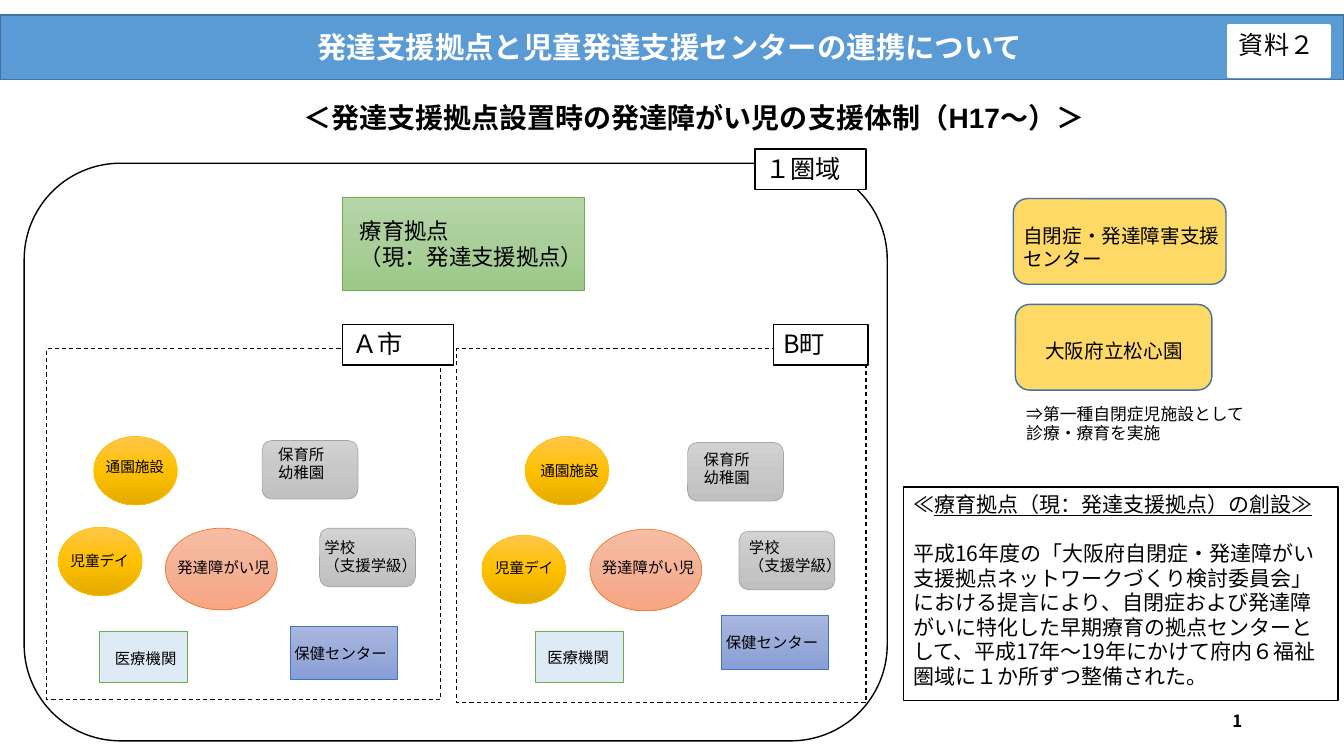
from copy import deepcopy
from dataclasses import dataclass

from lxml import etree
from pptx import Presentation
from pptx.dml.color import RGBColor
from pptx.enum.dml import MSO_LINE
from pptx.enum.shapes import MSO_SHAPE
from pptx.enum.text import MSO_ANCHOR, PP_ALIGN
from pptx.oxml.ns import qn
from pptx.util import Inches, Pt

RECT, ROUND, OVAL = MSO_SHAPE.RECTANGLE, MSO_SHAPE.ROUNDED_RECTANGLE, MSO_SHAPE.OVAL
LEFT, CENTER, RIGHT, JUSTIFY = PP_ALIGN.LEFT, PP_ALIGN.CENTER, PP_ALIGN.RIGHT, PP_ALIGN.JUSTIFY
TOP, MIDDLE = MSO_ANCHOR.TOP, MSO_ANCHOR.MIDDLE
DASH = MSO_LINE.DASH


@dataclass(frozen=True)
class Theme:
    font: str = "Noto Sans CJK JP"
    title_font: str = "Arial"
    tag_font: str = "TeX Gyre Schola"
    black: str = "000000"
    white: str = "FFFFFF"
    banner: str = "5B9BD5"
    outline: str = "43739E"
    center: str = "FFD966"
    green: tuple = ("B5D5A7", "AACE9A", "9CC987")
    green_line: str = "70AD47"
    salmon: tuple = ("F7BDA5", "F5B196", "F8A582")
    salmon_line: str = "ED7D31"
    gold: tuple = ("FFC64B", "FFC000", "E3AB00")
    gold_line: str = "FFC000"
    gray: tuple = ("D2D2D2", "C8C8C8", "C0C0C0")
    gray_line: str = "A5A5A5"
    blue: tuple = ("A8B7DF", "9AABD9", "889ED7")
    blue_line: str = "4472C4"
    pale: str = "DEEBF7"
    banner_size: float = 21
    title_size: float = 20
    tag_size: float = 18
    base_size: float = 16
    body_size: float = 15
    center_size: float = 14
    small: float = 12
    label: float = 11
    oval_label: float = 10.5
    line_height: float = 1.17


T = Theme()

# name: (shape, fill, line, size, label lines, label width, label type size)
FACILITIES = {
    "child": (OVAL, T.salmon, T.salmon_line, (1.11, 0.81), ["発達障がい児"], 1.61, T.label),
    "nursery": (OVAL, T.gold, T.gold_line, (0.83, 0.68), ["通園施設"], 1.39, T.oval_label),
    "day": (OVAL, T.gold, T.gold_line, (0.83, 0.68), ["児童デイ"], 1.39, T.oval_label),
    "school": (ROUND, T.gray, T.gray_line, (0.95, 0.58), ["学校", "（支援学級）"], 1.13, T.label),
    "preschool": (ROUND, T.gray, T.gray_line, (0.95, 0.58), ["保育所", "幼稚園"], 0.89, T.label),
    "clinic": (RECT, T.pale, T.green_line, (0.87, 0.51), ["医療機関"], 1.27, T.label),
    "health": (RECT, T.blue, T.blue_line, (1.06, 0.53), ["保健センター"], 1.31, T.label),
}

# facility: place within the town, then label offset within the facility
TOWN_A = {
    "child": (1.18, 1.78, 0.02, 0.25), "nursery": (0.47, 0.87, 0.02, 0.17),
    "day": (0.12, 1.77, 0.02, 0.2), "school": (2.71, 1.78, -0.05, 0.05),
    "preschool": (2.14, 0.91, 0.06, 0), "clinic": (0.53, 2.8, 0.05, 0.13),
    "health": (2.42, 2.75, -0.06, 0.13),
}
TOWN_B = {
    "child": (1.32, 1.79, 0.02, 0.24), "nursery": (0.68, 0.87, 0.05, 0.21),
    "day": (0.25, 1.85, 0.03, 0.19), "school": (2.8, 1.81, 0, 0.02),
    "preschool": (2.29, 0.93, 0.06, 0.03), "clinic": (0.78, 2.8, 0.02, 0.12),
    "health": (2.63, 2.65, -0.06, 0.13),
}


def rgb(value):
    return RGBColor.from_string(value)


def style(p, size, color=T.black, bold=False, align=LEFT, font=T.font):
    p.alignment = align
    p.line_spacing = Pt(round(size * T.line_height, 1))
    p.font.size, p.font.bold, p.font.name = Pt(size), bold, font
    p.font.color.rgb = rgb(color)
    east_asian = T.font if font == T.title_font else font
    etree.SubElement(p._p.pPr.find(qn("a:defRPr")), qn("a:ea"), typeface=east_asian)


def write(sp, lines, size, anchor=TOP, **look):
    tf = sp.text_frame
    tf.word_wrap, tf.vertical_anchor = True, anchor
    tf.text = "\n".join(lines)
    for p in tf.paragraphs:
        style(p, size, **look)


def add_text(slide, box, lines, size, **look):
    sp = slide.shapes.add_textbox(*map(Inches, box))
    write(sp, lines, size, **look)


def add_box(slide, kind, box, fill, line, width=1.0):
    """Draw a shape whose fill is a colour, three gradient colours or None."""
    sp = slide.shapes.add_shape(kind, *map(Inches, box))
    sp.shadow.inherit = False
    sp.line.color.rgb, sp.line.width = rgb(line), Pt(width)
    if fill is None:
        sp.fill.background()
    elif isinstance(fill, str):
        sp.fill.solid()
        sp.fill.fore_color.rgb = rgb(fill)
    else:
        sp.fill.gradient()
        sp.fill.gradient_angle = 270
        first = sp._element.spPr.find(".//" + qn("a:gs"))
        middle = deepcopy(first)
        middle.set("pos", "50000")
        first.addnext(middle)
        for stop, color in zip(sp.fill.gradient_stops, fill):
            stop.color.rgb = rgb(color)
    return sp


def add_tag(slide, box, name):
    write(add_box(slide, RECT, box, T.white, T.black), [name], T.tag_size)


def add_banner(slide, x, y, w, h):
    add_box(slide, RECT, (x, y, w, h), T.banner, T.outline)
    add_text(slide, (x + 3.05, y + 0.1, 7.23, 0.45),
             ["発達支援拠点と児童発達支援センターの連携について"],
             T.banner_size, color=T.white, bold=True)
    tag = add_box(slide, RECT, (x + 12.19, y + 0.1, 1, 0.51), T.white, T.white, 2.25)
    write(tag, ["資料２"], T.tag_size, align=JUSTIFY, font=T.tag_font)


def add_title(slide, *box):
    sp = slide.shapes.title
    sp.left, sp.top, sp.width, sp.height = map(Inches, box)
    write(sp, ["＜発達支援拠点設置時の発達障がい児の支援体制（H17～）＞"], T.title_size,
          anchor=MIDDLE, bold=True, align=CENTER, font=T.title_font)


def add_region(slide, x, y, w, h):
    add_box(slide, ROUND, (x, y, w, h), T.white, T.black)
    add_box(slide, RECT, (x + 3.16, y + 0.34, 2.4, 0.92), T.green, T.green_line, 0.5)
    add_text(slide, (x + 3.23, y + 0.49, 2.44, 0.64),
             ["療育拠点", "（現：発達支援拠点）"], T.base_size)
    add_tag(slide, (x + 7.25, y - 0.14, 1.1, 0.4), "１圏域")


def add_town(slide, box, name, tag_x, tag_w, places):
    x, y = box[:2]
    add_box(slide, RECT, box, None, T.black, 0.75).line.dash_style = DASH
    for key, (dx, dy, label_x, label_y) in places.items():
        kind, fill, line, (w, h), lines, label_w, size = FACILITIES[key]
        left, top = x + dx, y + dy
        add_box(slide, kind, (left, top, w, h), fill, line, 0.5)
        label_h = 0.11 + 0.18 * len(lines)
        add_text(slide, (left + label_x, top + label_y, label_w, label_h), lines, size)
    add_tag(slide, (x + tag_x, y - 0.24, tag_w, 0.4), name)


def add_prefecture_centers(slide, x, y):
    add_box(slide, ROUND, (x, y, 2.11, 0.85), T.center, T.outline)
    add_text(slide, (x, y + 0.21, 2.23, 0.57), ["自閉症・発達障害支援センター"], T.center_size)
    add_box(slide, ROUND, (x + 0.02, y + 1.05, 1.95, 0.85), T.center, T.outline)
    add_text(slide, (x - 0.02, y + 1.35, 2.04, 0.34), ["大阪府立松心園"],
             T.center_size, align=CENTER)
    add_text(slide, (x + 0.03, y + 1.99, 2.45, 0.5),
             ["⇒第一種自閉症児施設として診療・療育を実施"], T.small)


def add_founding_note(slide, *box):
    sp = add_box(slide, RECT, box, T.white, T.black)
    write(sp, ["≪", "平成16年度の「大阪府自閉症・発達障がい支援拠点ネットワークづくり検討委員会」"
               "における提言により、自閉症および発達障がいに特化した早期療育の拠点センターとして、"
               "平成17年～19年にかけて府内６福祉圏域に１か所ずつ整備された。"], T.body_size)
    heading = sp.text_frame.paragraphs[0]
    heading.space_after = Pt(18)
    r = heading.add_run()
    r.text = "療育拠点（現：発達支援拠点）の創設≫"
    r.font.underline = True


def main():
    prs = Presentation()
    prs.slide_width, prs.slide_height = Inches(13.33), Inches(7.5)
    slide = prs.slides.add_slide(prs.slide_layouts[5])
    add_title(slide, 0.67, 0.96, 12.42, 0.42)
    add_region(slide, 0.24, 1.62, 8.56, 5.73)
    add_town(slide, (0.46, 3.46, 3.91, 3.48), "Ａ市", 2.94, 1.1, TOWN_A)
    add_town(slide, (4.53, 3.46, 4.06, 3.51), "B町", 3.14, 0.94, TOWN_B)
    add_prefecture_centers(slide, 10.05, 1.97)
    add_founding_note(slide, 8.96, 4.83, 4.31, 2.12)
    add_banner(slide, 0, 0.15, 13.33, 0.64)
    add_text(slide, (9.42, 6.95, 3, 0.4), ["1"], T.small, anchor=MIDDLE, bold=True, align=RIGHT)
    prs.save("out.pptx")


if __name__ == "__main__":
    main()
